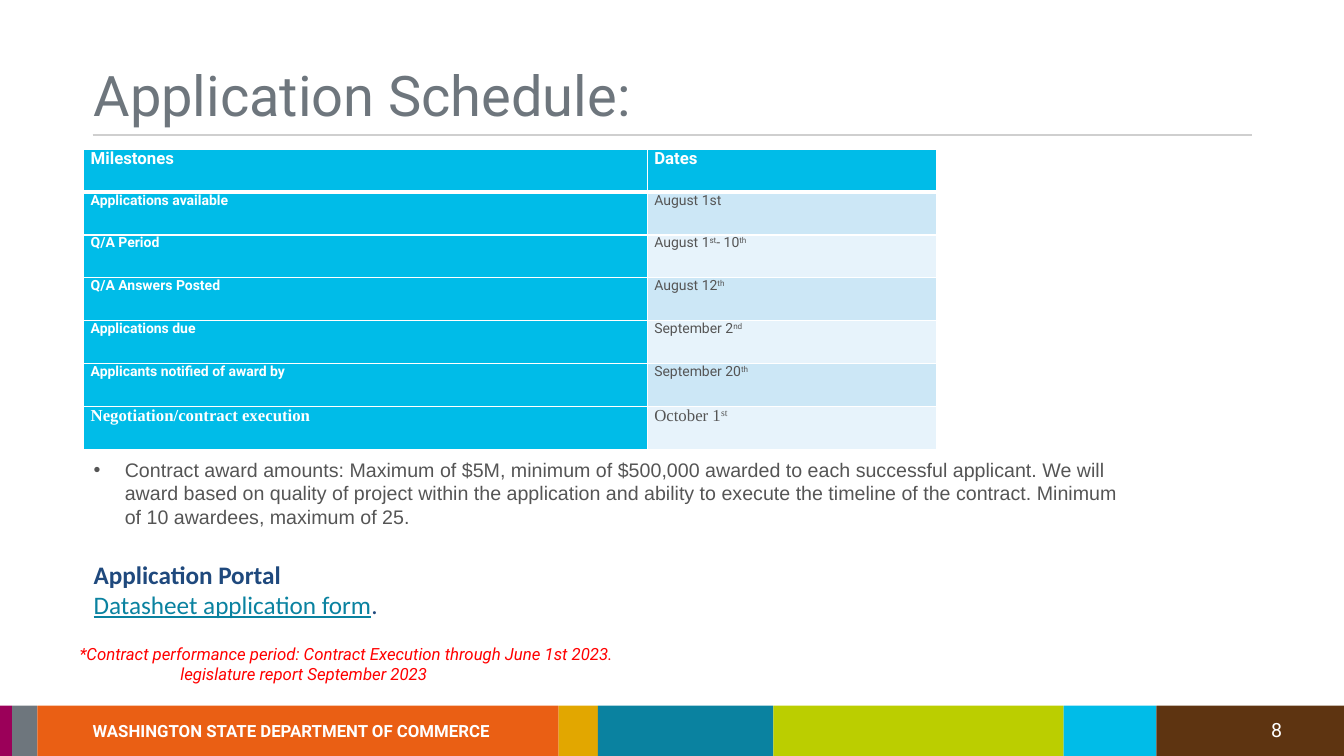
from lxml import etree
from pptx import Presentation
from pptx.dml.color import RGBColor
from pptx.enum.shapes import MSO_CONNECTOR, MSO_SHAPE
from pptx.enum.text import MSO_ANCHOR
from pptx.oxml.ns import qn
from pptx.util import Inches, Pt

RECTANGLE = MSO_SHAPE.RECTANGLE
STRAIGHT = MSO_CONNECTOR.STRAIGHT
TOP, BOTTOM = MSO_ANCHOR.TOP, MSO_ANCHOR.BOTTOM

COLORS = {
    "white": "FFFFFF", "plum": "9B0059", "slate": "6E767D", "orange": "EA5F14",
    "gold": "E2A700", "teal": "0A82A0", "lime": "BBCE00", "sky": "00BCE8",
    "brown": "5E3411", "rule": "CFCFCF", "text": "555555", "navy": "1F497D",
    "red": "FF0000", "band_dark": "CCE7F6", "band_light": "E7F3FB",
}


def add_span(para, text, size, font, color, bold=False, italic=False):
    span = para.add_run()
    span.text = text
    span.font.size = Pt(size)
    span.font.name = font
    span.font.bold = bold
    span.font.italic = italic
    span.font.color.rgb = RGBColor.from_string(COLORS[color])
    return span


def add_box(left, top, width, height, wrap=True, anchor=TOP):
    """Add a text box and return its text frame."""
    frame = page.shapes.add_textbox(
        Inches(left), Inches(top), Inches(width), Inches(height)).text_frame
    frame.word_wrap = wrap
    frame.vertical_anchor = anchor
    return frame


deck = Presentation()
deck.slide_width = Inches(13.33)
deck.slide_height = Inches(7.5)
page = deck.slides.add_slide(deck.slide_layouts[6])

# Footer band: each block runs to the start of the next one
blocks = [(0, "plum"), (0.12, "slate"), (0.37, "orange"), (5.54, "gold"),
          (5.93, "teal"), (7.67, "lime"), (10.55, "sky"), (11.47, "brown")]
ends = [left for left, color in blocks[1:]] + [13.33]
bars = [(left, 6.95, end - left, 0.55, color)
        for (left, color), end in zip(blocks, ends)]
bars.append((0, 6.91, 13.33, 0.09, "white"))
for left, top, width, height, color in bars:
    bar = page.shapes.add_shape(
        RECTANGLE, Inches(left), Inches(top), Inches(width), Inches(height))
    bar.shadow.inherit = False
    bar.fill.solid()
    bar.fill.fore_color.rgb = RGBColor.from_string(COLORS[color])
    bar.line.fill.background()

agency = add_box(0.82, 7.1, 4.23, 0.3, wrap=False)
add_span(agency.paragraphs[0], "WASHINGTON STATE DEPARTMENT OF COMMERCE",
         12, "Roboto", "white", bold=True)
page_number = add_box(12.51, 7.07, 0.44, 0.34, wrap=False)
add_span(page_number.paragraphs[0], "8", 14, "Roboto", "white")

# Title and rule
title = add_box(0.83, 0.3, 11.96, 1.03, anchor=BOTTOM)
title.paragraphs[0].line_spacing = 0.9
add_span(title.paragraphs[0], "Application Schedule:", 40, "Roboto", "slate")

rule = page.shapes.add_connector(
    STRAIGHT, Inches(0.92), Inches(1.34), Inches(12.42), Inches(1.34))
rule.line.color.rgb = RGBColor.from_string(COLORS["rule"])
rule.line.width = Pt(1)
etree.SubElement(rule._element.spPr, qn("a:effectLst"))

# Award amounts and portal
details = add_box(0.83, 4.49, 10.44, 1.72)
award = details.paragraphs[0]
award_format = award._p.get_or_add_pPr()
award_format.set("marL", str(Inches(0.31)))
award_format.set("indent", str(Inches(-0.31)))
etree.SubElement(award_format, qn("a:buFont"), typeface="Arial")
etree.SubElement(award_format, qn("a:buChar"), char="•")
add_span(award, "Contract award amounts: Maximum of $5M, minimum of $500,000 "
         "awarded to each successful applicant. We will award based on quality "
         "of project within the application and ability to execute the timeline "
         "of the contract. Minimum of 10 awardees, maximum of 25.",
         14, "Arial", "text")

portal = details.add_paragraph()
portal.space_before = Pt(22)
add_span(portal, "Application Portal", 18, "Calibri", "navy", bold=True)
form = details.add_paragraph()
add_span(form, "Datasheet application form", 18, "Calibri", "teal").font.underline = True
add_span(form, ".", 18, "Calibri", "navy")

# Schedule: date parts alternate between normal and superscript
schedule = [
    ("Milestones", ["Dates"]),
    ("Applications available", ["August 1st"]),
    ("Q/A Period", ["August 1", "st", "- 10", "th"]),
    ("Q/A Answers Posted", ["August 12", "th"]),
    ("Applications due", ["September 2", "nd"]),
    ("Applicants notified of award by", ["September 20", "th"]),
    ("Negotiation/contract execution", ["October 1", "st"]),
]
last = len(schedule) - 1
table = page.shapes.add_table(
    len(schedule), 2, Inches(0.83), Inches(1.48), Inches(8.46), Inches(2.98)).table
table.columns[0].width = Inches(5.59)
table.columns[1].width = Inches(2.87)
for row, (milestone, date_parts) in enumerate(schedule):
    size = 12 if row in (0, last) else 10
    font = "Times New Roman" if row == last else "Roboto"
    for column, parts in enumerate([[milestone], date_parts]):
        cell = table.cell(row, column)
        strong = row == 0 or column == 0
        fill = "sky" if strong else "band_dark" if row % 2 else "band_light"
        cell.fill.solid()
        cell.fill.fore_color.rgb = RGBColor.from_string(COLORS[fill])
        cell.margin_left = cell.margin_right = Inches(0.07)
        cell.margin_top = cell.margin_bottom = 0
        for index, part in enumerate(parts):
            span = add_span(cell.text_frame.paragraphs[0], part, size, font,
                            "white" if strong else "text", bold=strong)
            if index % 2:
                span._r.get_or_add_rPr().set("baseline", "30000")
        for position, side in enumerate(["lnL", "lnR", "lnT", "lnB"]):
            heavy = (row, side) in [(0, "lnB"), (1, "lnT")]
            border = etree.Element(qn("a:" + side), w=str(Pt(3 if heavy else 1)))
            paint = etree.SubElement(border, qn("a:solidFill"))
            etree.SubElement(paint, qn("a:srgbClr"), val=COLORS["white"])
            cell._tc.get_or_add_tcPr().insert(position, border)

# Performance period note
note = add_box(0.69, 6.34, 9.58, 0.5)
add_span(note.paragraphs[0],
         "*Contract performance period: Contract Execution through June 1st 2023.",
         12, "Roboto", "red", italic=True)
report = note.add_paragraph()
report._p.get_or_add_pPr().set("marL", str(Inches(1)))
add_span(report, "legislature report September 2023", 12, "Roboto", "red", italic=True)

for row in table.rows:
    row.height = Inches(2.98 / len(schedule))

deck.save("out.pptx")
